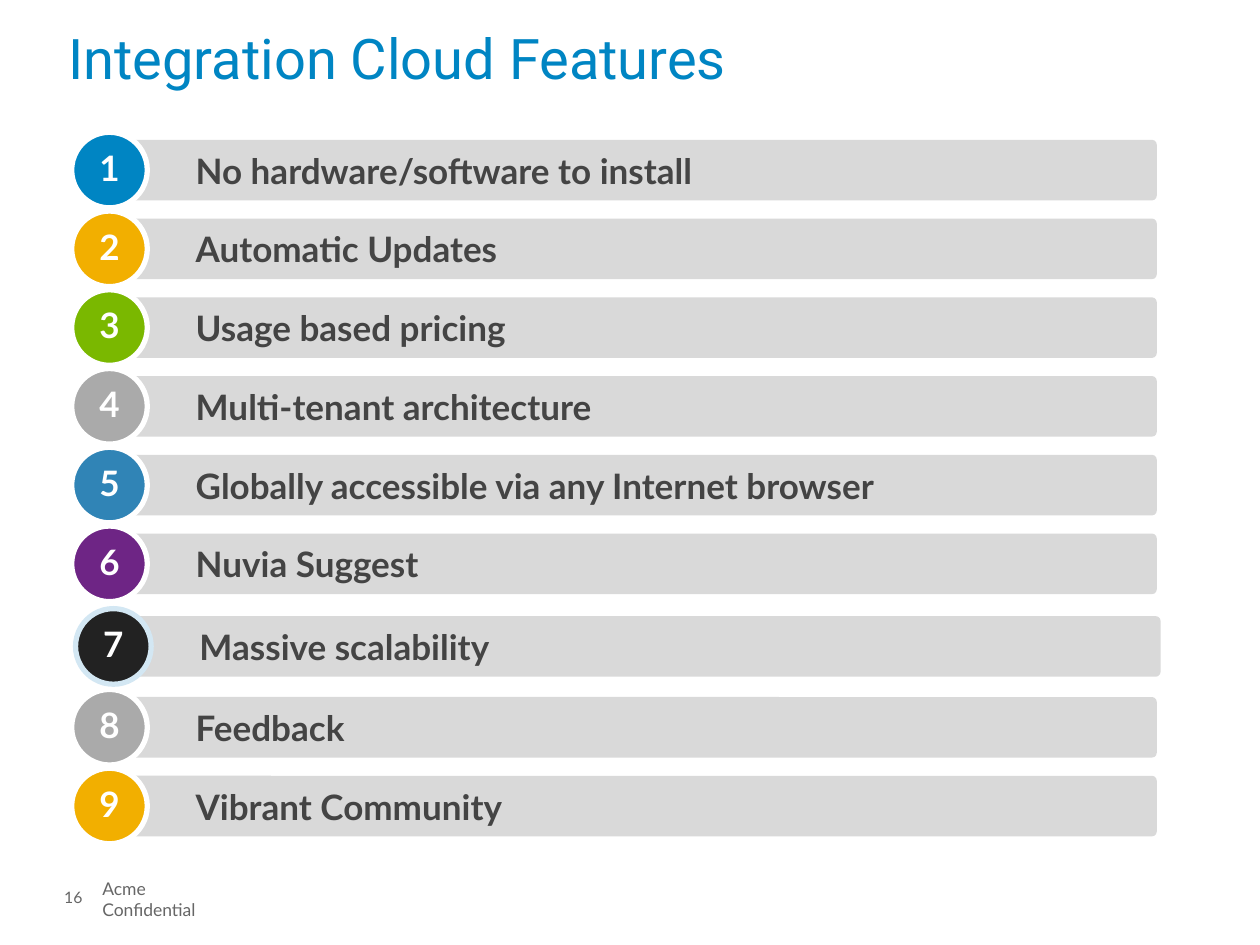
import pptx
import pptx.util
import pptx.dml.color
import pptx.enum.shapes
import pptx.enum.text

Pt = pptx.util.Pt
Shape = pptx.enum.shapes.MSO_SHAPE
Align = pptx.enum.text.PP_ALIGN
Anchor = pptx.enum.text.MSO_ANCHOR

LEFT, TOP, PITCH = 41, 75.6, 45
DISC = 43.2
WHITE = "FFFFFF"

# label, disc colour, ring colour, shift right, shift down
ROWS = [
    ("No hardware/software to install", "0085C3", WHITE, 0, 0),
    ("Automatic Updates", "F2AF00", WHITE, 0, 0),
    ("Usage based pricing", "7AB800", WHITE, 0, 0),
    ("Multi-tenant architecture", "AAAAAA", WHITE, 0, 0),
    ("Globally accessible via any Internet browser", "3084B6", WHITE, 0, 0),
    ("Nuvia Suggest", "6E2585", WHITE, 0, 0),
    ("Massive scalability", "222222", "D3E7F3", 2.2, 2.2),
    ("Feedback", "AAAAAA", WHITE, 0, 3.4),
    ("Vibrant Community", "F2AF00", WHITE, 0, 3.4),
]


def color(code):
    return pptx.dml.color.RGBColor.from_string(code)


def write(shape, text, size, code, face="Lato", bold=False,
          inset=(0, 0, 0, 0), anchor=Anchor.MIDDLE, wrap=True):
    frame = shape.text_frame
    frame.text = text
    frame.word_wrap = wrap
    frame.vertical_anchor = anchor
    (frame.margin_left, frame.margin_top,
     frame.margin_right, frame.margin_bottom) = map(Pt, inset)
    para = frame.paragraphs[0]
    para.alignment = Align.LEFT
    font = para.runs[0].font
    font.name, font.size, font.bold = face, Pt(size), bold
    font.color.rgb = color(code)
    return para


def add_text(slide, box, text, size, code, **style):
    shape = slide.shapes.add_textbox(*map(Pt, box))
    return write(shape, text, size, code, **style)


def add_shape(group, kind, box, fill, ring=None):
    shape = group.shapes.add_shape(kind, *map(Pt, box))
    shape.shadow.inherit = False
    shape.fill.solid()
    shape.fill.fore_color.rgb = color(fill)
    if ring:
        shape.line.color.rgb = color(ring)
        shape.line.width = Pt(3)
    else:
        shape.line.fill.background()
    return shape


def add_row(slide, index, label, fill, ring, right, down):
    left = LEFT + right
    top = TOP + index * PITCH + down
    group = slide.shapes.add_group_shape()

    # Grey bar with the feature
    bar = add_shape(group, Shape.ROUNDED_RECTANGLE,
                    (left + 34, top + 4.3, 586, 34.6), "D9D9D9")
    bar.adjustments[0] = 0.08
    write(bar, label, 20, "444444", bold=True, inset=(36, 3.6, 7.2, 3.6))

    # Numbered disc over its left end
    disc = add_shape(group, Shape.OVAL, (left, top, DISC, DISC), fill, ring)
    para = write(disc, str(index + 1), 20, WHITE, bold=True,
                 inset=(7.2, 3.6, 7.2, 3.6), wrap=False)
    para.alignment = Align.CENTER
    para.line_spacing = 0.9


def main():
    deck = pptx.Presentation()
    deck.slide_width, deck.slide_height = Pt(720), Pt(540)
    slide = deck.slides.add_slide(deck.slide_layouts[6])

    # Title
    title = add_text(slide, (39, 18, 649, 67), "Integration Cloud Features",
                     32, "0085C3", face="Roboto", anchor=Anchor.TOP)
    title.line_spacing = 0.9

    # Footer
    add_text(slide, (58.5, 507.6, 84, 12.2), "Acme Confidential", 10,
             "666666", inset=(0, 0, 7.2, 0), wrap=False)
    add_text(slide, (36.7, 506.9, 20.2, 12.2), "16", 9,
             "666666", inset=(0, 0, 7.2, 0))

    # Feature list
    for index, row in enumerate(ROWS):
        add_row(slide, index, *row)

    deck.save("out.pptx")


if __name__ == "__main__":
    main()
